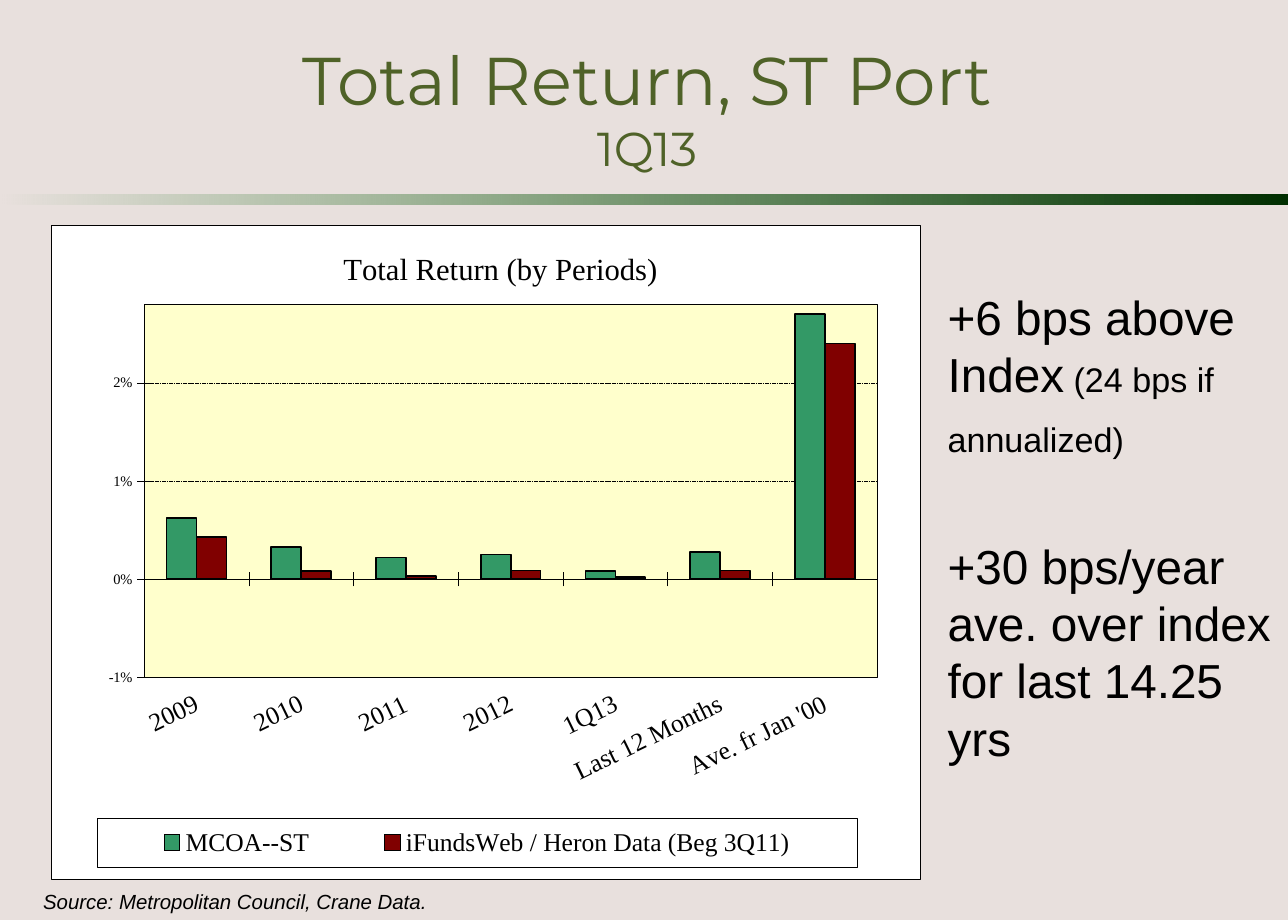
from pptx import Presentation
from pptx.chart.data import CategoryChartData
from pptx.dml.color import RGBColor
from pptx.enum.chart import (XL_CHART_TYPE, XL_LEGEND_POSITION, XL_TICK_LABEL_POSITION,
                             XL_TICK_MARK)
from pptx.enum.dml import MSO_LINE
from pptx.enum.shapes import MSO_SHAPE
from pptx.enum.text import MSO_ANCHOR, PP_ALIGN
from pptx.oxml import parse_xml
from pptx.oxml.ns import nsdecls, qn
from pptx.util import Inches, Pt

CLUSTERED = XL_CHART_TYPE.COLUMN_CLUSTERED
LEGEND_BOTTOM = XL_LEGEND_POSITION.BOTTOM
LABELS_LOW = XL_TICK_LABEL_POSITION.LOW
TICK_CROSS = XL_TICK_MARK.CROSS
DASHED = MSO_LINE.SQUARE_DOT
RECTANGLE = MSO_SHAPE.RECTANGLE
TOP, MIDDLE = MSO_ANCHOR.TOP, MSO_ANCHOR.MIDDLE
LEFT, CENTER = PP_ALIGN.LEFT, PP_ALIGN.CENTER

BACKGROUND = RGBColor(0xE8, 0xE0, 0xDD)
OLIVE = RGBColor(0x4F, 0x62, 0x28)
BAND_START = RGBColor(0x00, 0x66, 0x00)
BAND_END = RGBColor(0x00, 0x2F, 0x00)
BLACK = RGBColor(0x00, 0x00, 0x00)
WHITE = RGBColor(0xFF, 0xFF, 0xFF)
PALE_YELLOW = RGBColor(0xFF, 0xFF, 0xCC)
PORTFOLIO_GREEN = RGBColor(0x33, 0x99, 0x66)
INDEX_RED = RGBColor(0x80, 0x00, 0x00)

COLUMNS, ROWS = 126, 90
PERIODS = ["2009", "2010", "2011", "2012", "1Q13", "Last 12 Months", "Ave. fr Jan '00"]
RETURNS = [
    ("MCOA--ST", PORTFOLIO_GREEN,
     [0.0062, 0.0033, 0.0022, 0.0025, 0.0008, 0.0028, 0.027]),
    ("iFundsWeb / Heron Data (Beg 3Q11)", INDEX_RED,
     [0.0043, 0.0008, 0.0003, 0.0009, 0.0002, 0.0009, 0.024]),
]


def set_font(font, size, name, color=BLACK, italic=False):
    font.size, font.name, font.italic, font.bold = Pt(size), name, italic, False
    font.color.rgb = color


def set_line(line, width, color=BLACK):
    line.color.rgb = color
    line.width = Pt(width)


def chart_layout(x, y, width=None, height=None, target=""):
    """Manual layout in shares of the chart's size."""
    inner = f'<c:layoutTarget val="{target}"/>' if target else ""
    modes = '<c:xMode val="edge"/><c:yMode val="edge"/>'
    parts = zip("xywh", (x, y, width, height))
    values = "".join(f'<c:{key} val="{v}"/>' for key, v in parts if v is not None)
    return parse_xml(f'<c:layout {nsdecls("c")}><c:manualLayout>{inner}{modes}{values}'
                     '</c:manualLayout></c:layout>')


def framed_fill(color):
    """Solid fill with a thin black border for a part of a chart."""
    return parse_xml(
        f'<c:spPr {nsdecls("c", "a")}><a:solidFill><a:srgbClr val="{color}"/></a:solidFill>'
        f'<a:ln w="{Pt(0.25)}"><a:solidFill><a:srgbClr val="{BLACK}"/></a:solidFill></a:ln>'
        '</c:spPr>')


def replace_layout(part, layout, after=None):
    for old in part.findall(qn("c:layout")):
        part.remove(old)
    if after is None:
        part.insert(0, layout)
    else:
        part.find(qn(after)).addnext(layout)


class ReturnSlide:
    body_font = "Arial"
    title_font = "Montserrat"
    chart_font = "Times New Roman"

    def __init__(self, deck):
        self.width, self.height = deck.slide_width, deck.slide_height
        self.slide = deck.slides.add_slide(deck.slide_layouts[6])
        self.slide.background.fill.solid()
        self.slide.background.fill.fore_color.rgb = BACKGROUND

    def cells(self, column, row, columns, rows):
        """Grid cells to left, top, width, height."""
        across, down = self.width / COLUMNS, self.height / ROWS
        return (int(column * across), int(row * down),
                int(columns * across), int(rows * down))

    def band(self, *place):
        band = self.slide.shapes.add_shape(RECTANGLE, *self.cells(*place))
        band.shadow.inherit = False
        band.line.fill.background()
        band.fill.gradient()
        band.fill.gradient_angle = 0
        for stop, color, position in zip(band.fill.gradient_stops,
                                         (BAND_START, BAND_END), (0, 1)):
            stop.color.rgb, stop.position = color, position
        start = band.fill._xPr.find(".//" + qn("a:srgbClr"))
        start.append(parse_xml(f'<a:alpha {nsdecls("a")} val="0"/>'))

    def text(self, paragraphs, *place, font=body_font, color=BLACK, italic=False,
             align=LEFT, anchor=TOP, gap=0, leading=None):
        """Each paragraph is a list of (text, size) runs."""
        frame = self.slide.shapes.add_textbox(*self.cells(*place)).text_frame
        frame.word_wrap, frame.vertical_anchor = True, anchor
        frame.margin_left = frame.margin_right = frame.margin_top = frame.margin_bottom = 0
        for number, runs in enumerate(paragraphs):
            paragraph = frame.add_paragraph() if number else frame.paragraphs[0]
            paragraph.alignment = align
            if number:
                paragraph.space_before = Pt(gap)
            if leading:
                paragraph.line_spacing = Pt(leading)
            for index, (words, size) in enumerate(runs):
                if words == "\n":
                    paragraph.add_line_break()
                    continue
                run = paragraph.add_run()
                run.text = words
                set_font(run.font, size, font, color, italic)

    def return_chart(self, title, *place):
        data = CategoryChartData(number_format="0%")
        data.categories = PERIODS
        for name, _, values in RETURNS:
            data.add_series(name, values)
        chart = self.slide.shapes.add_chart(CLUSTERED, *self.cells(*place), data).chart
        set_font(chart.font, 8.5, self.chart_font)

        chart.has_title = True
        chart.chart_title.include_in_layout = False
        heading = chart.chart_title.text_frame
        heading.text = title
        set_font(heading.paragraphs[0].runs[0].font, 18, self.chart_font)

        plot = chart.plots[0]
        plot.gap_width, plot.overlap, plot.vary_by_categories = 150, 0, False
        for series, (_, color, _) in zip(plot.series, RETURNS):
            series.invert_if_negative = False
            series.format.fill.solid()
            series.format.fill.fore_color.rgb = color
            set_line(series.format.line, 1)

        periods, percent = chart.category_axis, chart.value_axis
        for axis, size in ((periods, 15), (percent, 8.5)):
            axis.major_tick_mark = TICK_CROSS
            set_line(axis.format.line, 0.25)
            set_font(axis.tick_labels.font, size, self.chart_font)
        periods.tick_label_position = LABELS_LOW
        percent.minimum_scale, percent.maximum_scale = -0.01, 0.028
        percent.major_unit = 0.01
        percent.tick_labels.number_format = "0%"
        percent.tick_labels.number_format_is_linked = False
        percent.has_major_gridlines = True
        set_line(percent.major_gridlines.format.line, 0.25)
        percent.major_gridlines.format.line.dash_style = DASHED

        chart.has_legend = True
        chart.legend.position = LEGEND_BOTTOM
        chart.legend.include_in_layout = False
        set_font(chart.legend.font, 15, self.chart_font)
        self.arrange(chart.element)

    def arrange(self, root):
        """Place and frame the chart's title, plot and legend; tilt the period names."""
        body = root.find(qn("c:chart"))
        plot_area, legend = body.find(qn("c:plotArea")), body.find(qn("c:legend"))
        replace_layout(body.find(qn("c:title")), chart_layout(0.33, 0.03), "c:tx")
        replace_layout(plot_area, chart_layout(0.107, 0.121, 0.844, 0.571, "inner"))
        replace_layout(legend, chart_layout(0.053, 0.907, 0.875, 0.075), "c:legendPos")
        plot_area.append(framed_fill(PALE_YELLOW))
        legend.find(qn("c:overlay")).addnext(framed_fill(WHITE))
        body.addnext(framed_fill(WHITE))
        tilt = plot_area.find(f'{qn("c:catAx")}/{qn("c:txPr")}/{qn("a:bodyPr")}')
        tilt.set("rot", str(-26 * 60000))
        tilt.set("vert", "horz")


def main():
    deck = Presentation()
    deck.slide_width, deck.slide_height = Inches(10.5), Inches(7.5)
    page = ReturnSlide(deck)
    page.band(0, 19, COLUMNS, 1)
    page.text([[("Total Return, ST Port", 39.6), ("\n", 0), ("1Q13", 27.9)]],
              5, 3, 116.6, 15, font=page.title_font, color=OLIVE,
              align=CENTER, anchor=MIDDLE)
    page.text([[("+6 bps above Index", 28), (" (24 bps if annualized)", 20)],
               [("+30 bps/year ave. over index for last 14.25 yrs", 28)]],
              92.7, 28.1, 32.3, 48, gap=45, leading=33.7)
    page.text([[("Source: Metropolitan Council, Crane Data.", 12)]],
              0, 87, 46, 2.4, italic=True, align=CENTER)
    page.return_chart("Total Return (by Periods)", 5, 22, 85, 64)
    deck.save("out.pptx")


if __name__ == "__main__":
    main()
